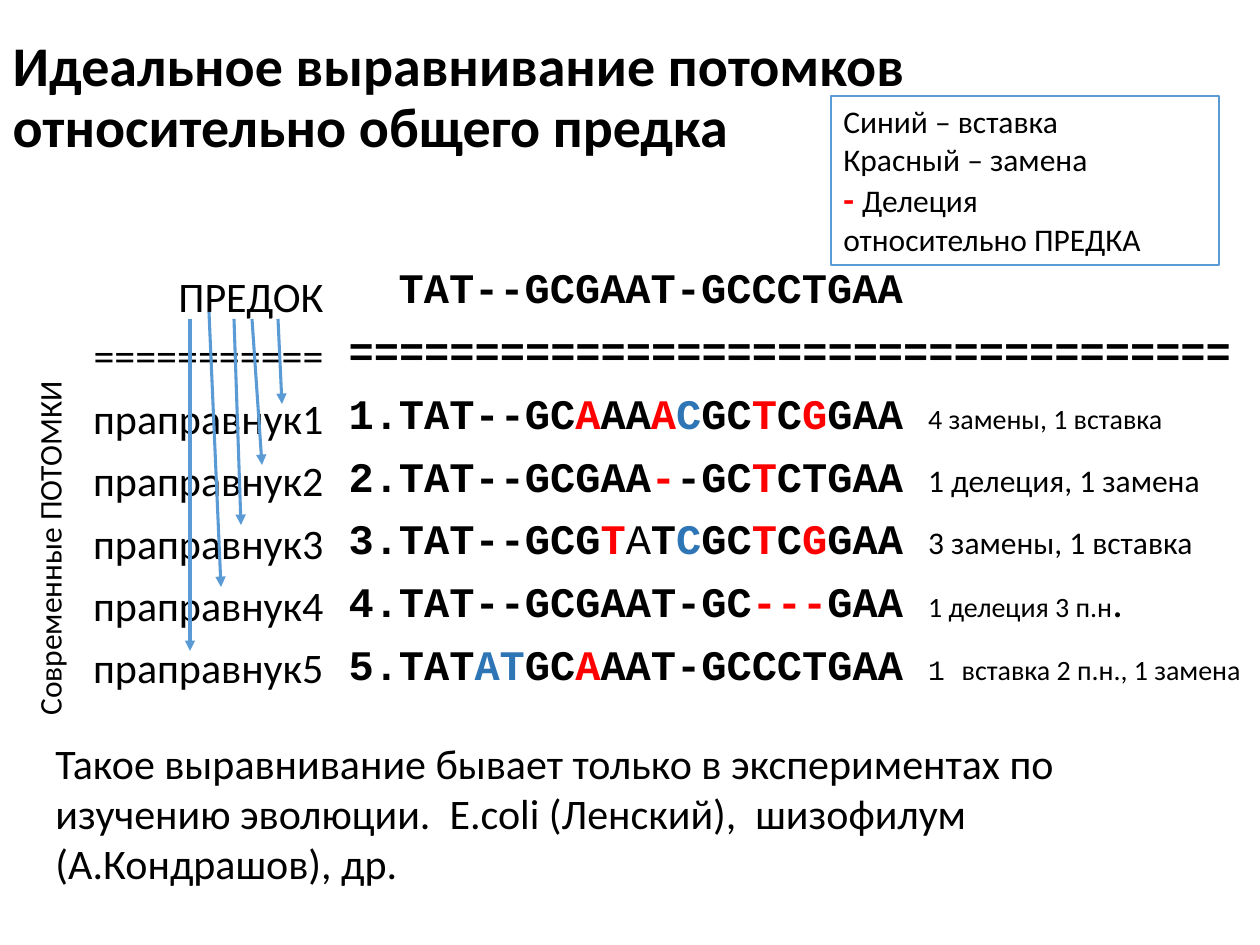
from lxml import etree
from pptx import Presentation
from pptx.dml.color import RGBColor
from pptx.enum.shapes import MSO_CONNECTOR, MSO_SHAPE
from pptx.enum.text import MSO_ANCHOR, MSO_AUTO_SIZE, PP_ALIGN
from pptx.oxml.ns import qn
from pptx.util import Pt

LEFT, RIGHT = PP_ALIGN.LEFT, PP_ALIGN.RIGHT
TOP, MIDDLE = MSO_ANCHOR.TOP, MSO_ANCHOR.MIDDLE
NO_FIT = MSO_AUTO_SIZE.NONE
STRAIGHT = MSO_CONNECTOR.STRAIGHT
RECTANGLE = MSO_SHAPE.RECTANGLE

EMU_PER_PX = 914400 / 126
SANS, MONO = "Calibri", "Courier New"
COLORS = {
    "text": "000000",
    "substitution": "FF0000",
    "insertion": "2E75B6",
    "line": "5B9BD5",
}
STYLES = {
    "title": (SANS, 32, True, "text"),
    "label": (SANS, 24, False, "text"),
    "legend": (SANS, 18, False, "text"),
    "legend mark": (SANS, 20, True, "substitution"),
    "base": (MONO, 24, True, "text"),
    "plain base": (MONO, 24, False, "text"),
    "red": (MONO, 24, True, "substitution"),
    "blue": (MONO, 24, True, "insertion"),
    "note": (SANS, 18, False, "text"),
    "small note": (SANS, 16, False, "text"),
    "mono note": (MONO, 16, False, "text"),
}

ANCESTOR = [("TAT--GCGAAT-GCCCTGAA", "base")]
RULE = [("=" * 35, "base")]
DESCENDANTS = [
    [("TAT--GC", "base"), ("A", "red"), ("AA", "base"), ("A", "red"), ("C", "blue"),
     ("GC", "base"), ("T", "red"), ("C", "base"), ("G", "red"), ("GAA ", "base"),
     ("4 замены, 1 вставка", "small note")],
    [("TAT--GCGAA", "base"), ("-", "red"), ("-GC", "base"), ("T", "red"),
     ("CTGAA ", "base"), ("1 делеция, 1 замена", "note")],
    [("TAT--GCG", "base"), ("T", "red"), ("A", "plain base"), ("T", "base"),
     ("C", "blue"), ("GC", "base"), ("T", "red"), ("C", "base"), ("G", "red"),
     ("GAA ", "base"), ("3 замены, 1 вставка", "note")],
    [("TAT--GCGAAT-GC", "base"), ("---", "red"), ("GAA ", "base"),
     ("1 делеция 3 п.н", "small note"), (".", "label")],
    [("TAT", "base"), ("AT", "blue"), ("GC", "base"), ("A", "red"),
     ("AAT-GCCCTGAA ", "base"), ("1 ", "mono note"),
     ("вставка 2 п.н., 1 замена", "small note")],
]
LABELS = ["ПРЕДОК", "=" * 11] + [f"праправнук{number}" for number in range(1, 6)]
LEGEND = [
    [("Синий – вставка", "legend")],
    [("Красный – замена", "legend")],
    [("- ", "legend mark"), ("Делеция", "legend")],
    [("относительно ПРЕДКА", "legend")],
]
CONCLUSION = (
    "Такое выравнивание бывает только в экспериментах по изучению эволюции.  "
    "E.coli (Ленский),  шизофилум (А.Кондрашов), др."
)
ARROWS = [
    (190, 319, 190, 651),
    (278, 319, 282, 404),
    (252, 319, 262, 465),
    (209, 312, 221, 587),
    (234, 319, 241, 525),
]


def px(value):
    return round(value * EMU_PER_PX)


def color(name):
    return RGBColor.from_string(COLORS[name])


class SlideBuilder:
    def __init__(self, slide):
        self.slide = slide

    def place(self, shape, box):
        shape.left, shape.top, shape.width, shape.height = map(px, box)

    def fill_text(self, shape, paragraphs, align=LEFT, anchor=TOP, wrap=True):
        frame = shape.text_frame
        frame.word_wrap = wrap
        frame.auto_size = NO_FIT
        frame.vertical_anchor = anchor
        for index, runs in enumerate(paragraphs):
            paragraph = frame.add_paragraph() if index else frame.paragraphs[0]
            paragraph.alignment = align
            for text, style in runs:
                run = paragraph.add_run()
                run.text = text
                font = run.font
                font.name, size, font.bold, color_name = STYLES[style]
                font.size = Pt(size)
                font.color.rgb = color(color_name)
        return frame.paragraphs

    def title(self, box, text):
        shape = self.slide.shapes.title
        self.place(shape, box)
        paragraph = self.fill_text(shape, [[(text, "title")]], anchor=MIDDLE)[0]
        paragraph.line_spacing = 0.9

    def alignment(self, box, ancestor, rule, descendants, indent):
        shape = self.slide.placeholders[1]
        self.place(shape, box)
        paragraphs = self.fill_text(shape, [ancestor, rule, *descendants])
        for index, paragraph in enumerate(paragraphs):
            paragraph.line_spacing = 0.9
            paragraph.space_before = Pt(10)
            numbered = index > 1
            properties = paragraph._p.get_or_add_pPr()
            properties.set("marL", str(0 if index == 1 else px(indent)))
            properties.set("indent", str(-px(indent) if numbered else 0))
            if numbered:
                etree.SubElement(properties, qn("a:buFont"), typeface=MONO)
                etree.SubElement(properties, qn("a:buAutoNum"), type="arabicPeriod")
            else:
                etree.SubElement(properties, qn("a:buNone"))

    def text(self, box, lines, style, align=LEFT, wrap=True, rotation=0):
        shape = self.slide.shapes.add_textbox(*map(px, box))
        shape.rotation = rotation
        return self.fill_text(shape, [[(line, style)] for line in lines], align, wrap=wrap)

    def legend(self, box, paragraphs):
        shape = self.slide.shapes.add_shape(RECTANGLE, *map(px, box))
        shape.shadow.inherit = False
        shape.fill.background()
        shape.line.color.rgb = color("line")
        shape.line.width = Pt(0.75)
        self.fill_text(shape, paragraphs)

    def arrow(self, points):
        connector = self.slide.shapes.add_connector(STRAIGHT, *map(px, points))
        connector.line.color.rgb = color("line")
        connector.line.width = Pt(1.75)
        line = connector.line._get_or_add_ln()
        etree.SubElement(line, qn("a:tailEnd"), type="triangle")
        etree.SubElement(connector._element.spPr, qn("a:effectLst"))


def main():
    presentation = Presentation()
    presentation.slide_width = px(1260)
    presentation.slide_height = px(945)
    slide = presentation.slides.add_slide(presentation.slide_layouts[1])
    builder = SlideBuilder(slide)

    builder.title((0, 18, 1249, 162),
                  "Идеальное выравнивание потомков относительно общего предка")
    builder.alignment((336, 261, 924, 450), ANCESTOR, RULE, DESCENDANTS, indent=50)
    labels = builder.text((78, 256, 258, 447), LABELS, "label", RIGHT, wrap=False)
    for index, paragraph in enumerate(labels):
        paragraph.line_spacing = 1.17 if index < 2 else 1.24
    builder.text((43, 731, 1177, 165), [CONCLUSION], "label")
    for points in ARROWS:
        builder.arrow(points)
    builder.legend((831, 96, 388, 169), LEGEND)
    builder.text((-131, 523, 360, 50), ["Современные ПОТОМКИ"], "legend", rotation=270)

    presentation.save("out.pptx")


if __name__ == "__main__":
    main()
